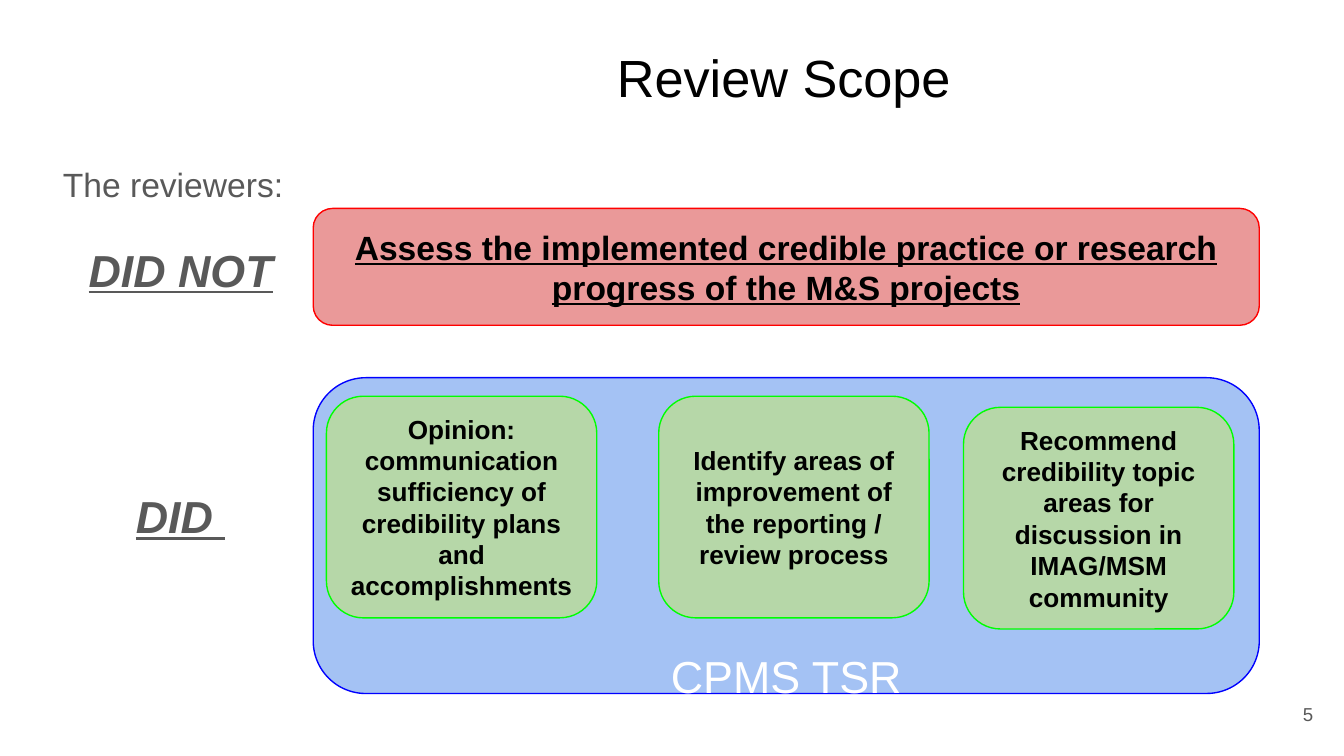
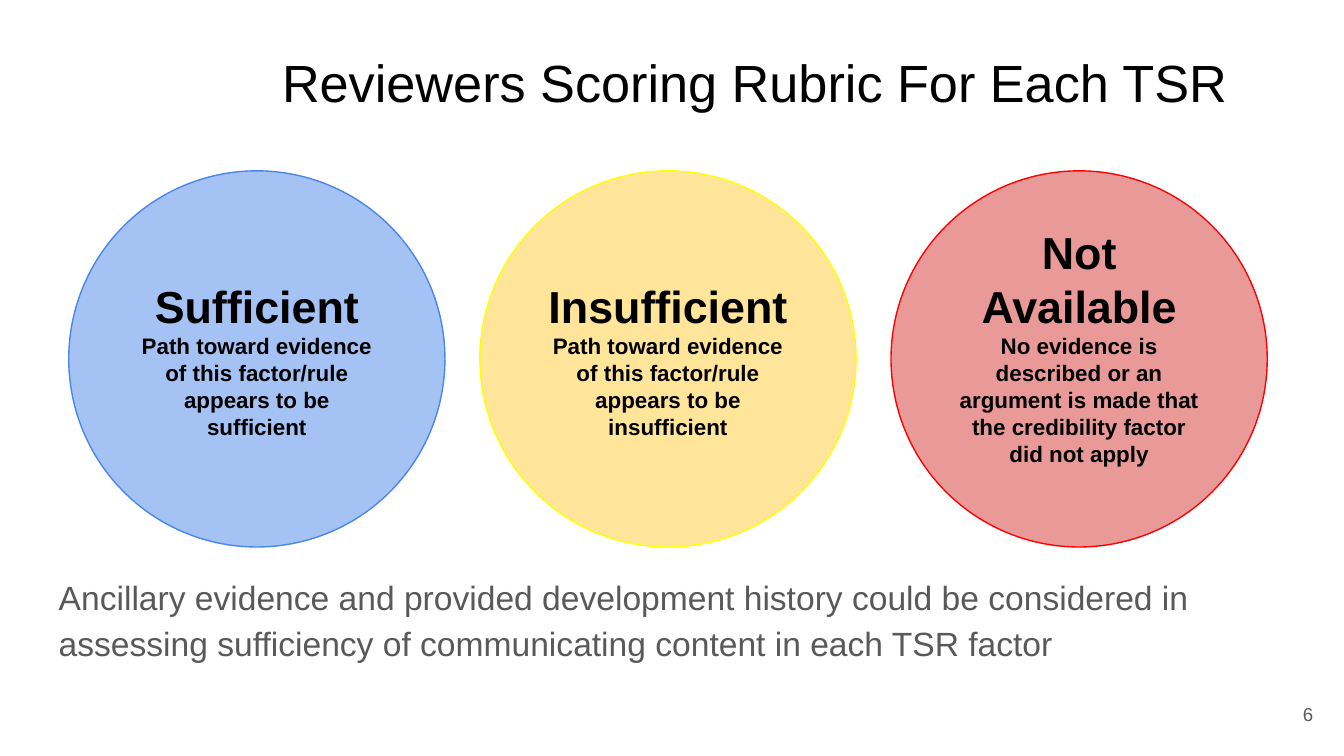
from dataclasses import dataclass

from pptx import Presentation
from pptx.dml.color import RGBColor
from pptx.enum.shapes import MSO_SHAPE
from pptx.enum.text import MSO_ANCHOR, MSO_AUTO_SIZE, PP_ALIGN
from pptx.oxml.ns import qn
from pptx.util import Cm, Pt


@dataclass(frozen=True)
class Theme:
    font: str = "Arial"
    black: str = "000000"
    white: str = "FFFFFF"
    grey: str = "595959"
    blue: str = "A4C2F4"
    blue_line: str = "0000FF"
    mid_blue_line: str = "4A86E8"
    red: str = "EA9999"
    red_line: str = "FF0000"
    green: str = "B6D7A8"
    green_line: str = "00FF00"
    yellow: str = "FFE599"
    yellow_line: str = "FFFF00"
    title: int = 28
    label: int = 24
    body: int = 18
    card: int = 14
    detail: int = 12
    number: int = 10
    line: float = 0.75
    inset: float = 0.25


T = Theme()


# Text
def setup_frame(tf, anchor, top=T.inset, bottom=T.inset):
    tf.word_wrap = True
    tf.auto_size = MSO_AUTO_SIZE.NONE
    tf.vertical_anchor = anchor
    tf.margin_left = tf.margin_right = Cm(T.inset)
    tf.margin_top, tf.margin_bottom = Cm(top), Cm(bottom)


def add_par(tf, text, size, color, align=PP_ALIGN.CENTER, bold=False,
            italic=False, underline=False, spacing=1.0, before=0, after=0):
    first = tf.paragraphs[0]
    p = first if not first.runs else tf.add_paragraph()
    p.alignment = align
    p.line_spacing = spacing
    p.space_before, p.space_after = Pt(before), Pt(after)
    r = p.add_run()
    r.text = text
    font = r.font
    font.name, font.size = T.font, Pt(size)
    font.bold, font.italic, font.underline = bold, italic, underline
    font.color.rgb = RGBColor.from_string(color)
    return p


def add_body_par(tf, text, size=T.body, align=PP_ALIGN.LEFT, **style):
    p = add_par(tf, text, size, T.grey, align, spacing=1.15, **style)
    pPr = p._p.get_or_add_pPr()
    pPr.set("marL", "0")
    pPr.set("indent", "0")
    pPr.append(pPr.makeelement(qn("a:buNone"), {}))


# Placeholders and shapes
def place(sp, left, top, width, height):
    sp.left, sp.top, sp.width, sp.height = map(Cm, (left, top, width, height))


def add_slide(prs, title, number, title_top, title_align, body_box):
    s = prs.slides.add_slide(prs.slide_layouts[1])
    sp = s.shapes.title
    place(sp, 5.08, title_top, 19.46, 1.6)
    setup_frame(sp.text_frame, MSO_ANCHOR.TOP)
    add_par(sp.text_frame, title, T.title, T.black, title_align)

    body = s.placeholders[1]
    place(body, *body_box)
    setup_frame(body.text_frame, MSO_ANCHOR.TOP)

    box = s.shapes.add_textbox(Cm(23.55), Cm(12.95), Cm(1.52), Cm(1.09))
    setup_frame(box.text_frame, MSO_ANCHOR.MIDDLE)
    add_par(box.text_frame, str(number), T.number, T.grey, PP_ALIGN.RIGHT)
    return s, body.text_frame


def add_box(s, kind, box, fill, line, anchor=MSO_ANCHOR.MIDDLE, **margins):
    sp = s.shapes.add_shape(kind, *map(Cm, box))
    sp.shadow.inherit = False
    sp.fill.solid()
    sp.fill.fore_color.rgb = RGBColor.from_string(fill)
    sp.line.color.rgb = RGBColor.from_string(line)
    sp.line.width = Pt(T.line)
    setup_frame(sp.text_frame, anchor, **margins)
    return sp.text_frame


# Slides
def build_scope(prs):
    s, tf = add_slide(prs, "Review Scope", 5, 0.61, PP_ALIGN.CENTER,
                      (0.94, 2.74, 4.95, 11.3))
    label = dict(size=T.label, align=PP_ALIGN.CENTER,
                 bold=True, italic=True, underline=True)
    add_body_par(tf, "The reviewers:")
    add_body_par(tf, "DID NOT", before=16, **label)
    add_body_par(tf, "DID ", before=99, after=16, **label)

    # Outside the scope
    left, width = 5.92, 17.88
    card = MSO_SHAPE.FLOWCHART_ALTERNATE_PROCESS
    tf = add_box(s, card, (left, 3.94, width, 2.21), T.red, T.red_line)
    add_par(tf, "Assess the implemented credible practice or research "
            "progress of the M&S projects", T.body, T.black,
            bold=True, underline=True)

    # Inside the scope
    tf = add_box(s, MSO_SHAPE.ROUNDED_RECTANGLE, (left, 7.14, width, 5.97),
                 T.blue, T.blue_line, MSO_ANCHOR.TOP, top=4.83, bottom=0)
    add_par(tf, "CPMS TSR", T.label, T.white)
    tasks = [
        (6.17, 7.49, "Opinion: communication sufficiency of credibility "
         "plans and accomplishments"),
        (12.45, 7.49, "Identify areas of improvement of the reporting / "
         "review process"),
        (18.21, 7.7, "Recommend credibility topic areas for discussion in "
         "IMAG/MSM community"),
    ]
    for x, y, text in tasks:
        tf = add_box(s, card, (x, y, 5.11, 4.19), T.green, T.green_line)
        add_par(tf, text, T.card, T.black, bold=True)


def build_rubric(prs):
    s, tf = add_slide(prs, "Reviewers Scoring Rubric For Each TSR", 6, 0.69,
                      PP_ALIGN.LEFT, (0.86, 10.54, 23.67, 2.01))
    add_body_par(tf, "Ancillary evidence and provided development history "
                 "could be considered in assessing sufficiency of "
                 "communicating content in each TSR factor", after=16)

    # Score circles
    scores = [
        ("Sufficient", "Path toward evidence of this factor/rule appears to "
         "be sufficient", T.blue, T.mid_blue_line, T.inset),
        ("Insufficient", "Path toward evidence of this factor/rule appears "
         "to be insufficient", T.yellow, T.yellow_line, T.inset),
        ("Not Available", "No evidence is described or an argument is made "
         "that the credibility factor did not apply",
         T.red, T.red_line, 0.75),
    ]
    size, step = 7.11, 7.77
    for i, (name, detail, fill, line, bottom) in enumerate(scores):
        tf = add_box(s, MSO_SHAPE.OVAL, (1.3 + i * step, 3.23, size, size),
                     fill, line, bottom=bottom)
        add_par(tf, name, T.label, T.black, bold=True)
        add_par(tf, detail, T.detail, T.black, bold=True)


def main():
    prs = Presentation()
    prs.slide_width, prs.slide_height = Cm(25.4), Cm(14.29)
    build_scope(prs)
    build_rubric(prs)
    prs.save("out.pptx")


if __name__ == "__main__":
    main()
